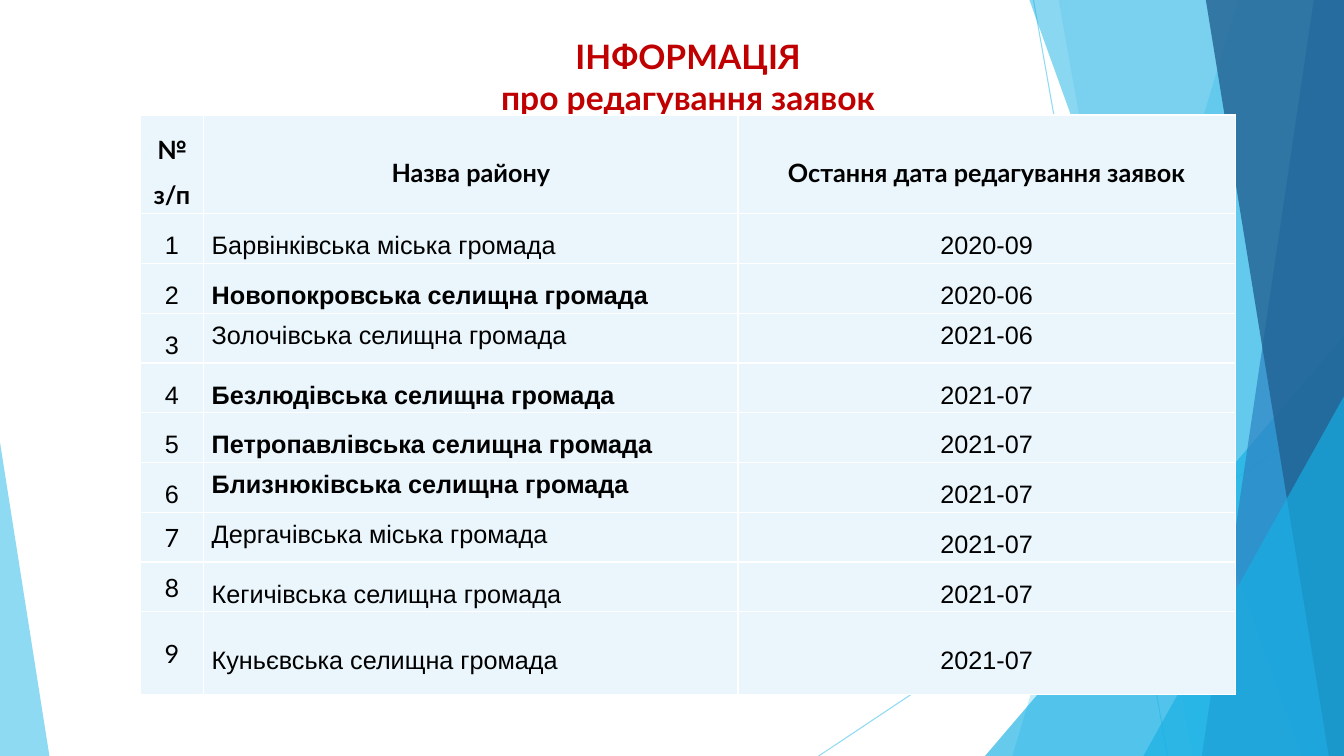
from dataclasses import dataclass

from lxml.etree import SubElement
from pptx import Presentation
from pptx.dml.color import RGBColor
from pptx.enum.shapes import MSO_CONNECTOR as Connector, MSO_SHAPE as Shape
from pptx.enum.text import MSO_ANCHOR as Anchor, PP_ALIGN as Align
from pptx.oxml import parse_xml
from pptx.oxml.ns import nsdecls, qn
from pptx.util import Inches, Pt

TITLE = ("ІНФОРМАЦІЯ", "про редагування заявок")
HEADER = ("№ з/п", "Назва району", "Остання дата редагування заявок")
COMMUNITIES = [
    ("Барвінківська міська громада", "2020-09"),
    ("Новопокровська селищна громада", "2020-06"),
    ("Золочівська селищна громада", "2021-06"),
    ("Безлюдівська селищна громада", "2021-07"),
    ("Петропавлівська селищна громада", "2021-07"),
    ("Близнюківська селищна громада", "2021-07"),
    ("Дергачівська міська громада", "2021-07"),
    ("Кегичівська селищна громада", "2021-07"),
    ("Куньєвська селищна громада", "2021-07"),
]
BOLD_NAMES = {2, 4, 5, 6}
TOP_CELLS = {(3, 1), (3, 2), (6, 1), (7, 1)}  # (row, column)
LATO_NUMBERS = {7, 8, 9}

WIDTH, HEIGHT = 13.33, 7.5
COLUMN_WIDTHS = (0.63, 5.3, 4.93)
ROW_HEIGHTS = (0.98, *[3.95 / 8] * 8, 0.82)


@dataclass(frozen=True)
class Theme:
    heading_font: str = "Lato"
    body_font: str = "Arial"
    title_size: int = 24
    table_size: int = 18
    title: str = "C00000"
    text: str = "000000"
    cell: str = "EAF6FC"
    border: str = "FFFFFF"
    sky: str = "5FCBEF"
    azure: str = "17B0E4"
    blue: str = "2E83C3"
    navy: str = "226292"


THEME = Theme()
RAYS = [((10.25, 0), (11.58, HEIGHT)), ((WIDTH, 4.03), (8.12, HEIGHT))]
# Bands run from a slanted left edge (top x, bottom x) to the slide's right side.
# Triangles: left, top, width, height, apex position. Both end with colour, opacity.
DECORATION = [
    ("band", (12.28, 10.04), THEME.sky, 36),
    ("band", (10.5, 11.83), THEME.sky, 20),
    ("triangle", (9.77, 3.33, 3.56, 4.17, 1), THEME.azure, 66),
    ("band", (10.21, 12.91), THEME.azure, 50),
    ("band", (13.03, 11.92), THEME.blue, 70),
    ("band", (11.96, 13.18), THEME.navy, 80),
    ("triangle", (11.34, 3.93, 1.99, 3.57, 1), THEME.azure, 66),
    ("triangle", (0, 4.39, 0.49, 3.11, 0), THEME.sky, 70),
]


def set_opacity(properties, percent):
    color = next(properties.iter(qn("a:srgbClr")))
    SubElement(color, qn("a:alpha"), val=str(percent * 1000))


def add_ray(slide, start, end):
    ray = slide.shapes.add_connector(
        Connector.STRAIGHT, *(Inches(value) for value in (*start, *end)))
    ray.line.color.rgb = RGBColor.from_string(THEME.sky)
    ray.line.width = Pt(0.75)
    properties = ray.element.spPr
    set_opacity(properties, 70)
    SubElement(properties, qn("a:effectLst"))


def add_decoration(slide, kind, geometry, color, opacity):
    if kind == "band":
        top_x, bottom_x = geometry
        points = [(Inches(x), Inches(y)) for x, y in (
            (top_x, 0), (WIDTH, 0), (WIDTH, HEIGHT), (bottom_x, HEIGHT))]
        builder = slide.shapes.build_freeform(*points[0])
        builder.add_line_segments(points[1:], close=True)
        shape = builder.convert_to_shape()
    else:
        *box, apex = geometry
        shape = slide.shapes.add_shape(
            Shape.ISOSCELES_TRIANGLE, *(Inches(value) for value in box))
        shape.adjustments[0] = apex
    shape.shadow.inherit = False
    shape.fill.solid()
    shape.fill.fore_color.rgb = RGBColor.from_string(color)
    shape.line.fill.background()
    set_opacity(shape.element.spPr, opacity)


def format_font(font, name, size, color, bold):
    font.name, font.size, font.bold = name, Pt(size), bold
    font.color.rgb = RGBColor.from_string(color)


def add_title(slide):
    title = slide.shapes.title
    title.element.getparent().append(title.element)  # in front of the decoration
    title.left, title.top = Inches(0.62), Inches(0.31)
    title.width, title.height = Inches(12.41), Inches(1.44)
    frame = title.text_frame
    frame.word_wrap = True
    frame.vertical_anchor = Anchor.TOP
    frame.text = "\v".join(TITLE)
    paragraph = frame.paragraphs[0]
    paragraph.alignment = Align.CENTER
    paragraph.line_spacing = 1.0
    paragraph.space_before = Pt(0)
    format_font(paragraph.font, THEME.heading_font, THEME.title_size, THEME.title, True)


def add_borders(cell):
    properties = cell._tc.get_or_add_tcPr()
    for index, side in enumerate("LRTB"):
        properties.insert(index, parse_xml(
            f'<a:ln{side} {nsdecls("a")} w="{Pt(1)}"><a:solidFill>'
            f'<a:srgbClr val="{THEME.border}"/></a:solidFill></a:ln{side}>'))


def fill_cell(cell, text, row, column):
    header = row == 0
    lato_number = column == 0 and row in LATO_NUMBERS
    at_top = (row, column) in TOP_CELLS
    name_cell = column == 1 and not header

    cell.fill.solid()
    cell.fill.fore_color.rgb = RGBColor.from_string(THEME.cell)
    add_borders(cell)
    cell.vertical_anchor = Anchor.TOP if at_top else Anchor.MIDDLE
    cell.margin_left = Inches(0.08 if at_top or name_cell else 0.01)
    cell.margin_right = cell.margin_top = Inches(0.08 if at_top else 0.01)
    cell.margin_bottom = Inches(0.08 if at_top else 0)

    cell.text = text
    paragraph = cell.text_frame.paragraphs[0]
    paragraph.alignment = Align.LEFT if name_cell else Align.CENTER
    paragraph.line_spacing = 1.0 if at_top or lato_number else 1.5
    font_name = THEME.heading_font if header or lato_number else THEME.body_font
    bold = header or (name_cell and row in BOLD_NAMES)
    format_font(paragraph.font, font_name, THEME.table_size, THEME.text, bold)


def add_community_table(slide):
    rows = [HEADER] + [(str(number), *community)
                       for number, community in enumerate(COMMUNITIES, 1)]
    table = slide.shapes.add_table(
        len(rows), len(HEADER), Inches(1.39), Inches(1.14),
        Inches(sum(COLUMN_WIDTHS)), Inches(sum(ROW_HEIGHTS))).table
    table.first_row = table.horz_banding = False
    for column, width in zip(table.columns, COLUMN_WIDTHS):
        column.width = Inches(width)
    for row, height in zip(table.rows, ROW_HEIGHTS):
        row.height = Inches(height)
    for row, texts in enumerate(rows):
        for column, text in enumerate(texts):
            fill_cell(table.cell(row, column), text, row, column)


def main():
    presentation = Presentation()
    presentation.slide_width = Inches(WIDTH)
    presentation.slide_height = Inches(HEIGHT)
    slide = presentation.slides.add_slide(presentation.slide_layouts[5])
    for start, end in RAYS:
        add_ray(slide, start, end)
    for item in DECORATION:
        add_decoration(slide, *item)
    add_title(slide)
    add_community_table(slide)
    presentation.save("out.pptx")


if __name__ == "__main__":
    main()
